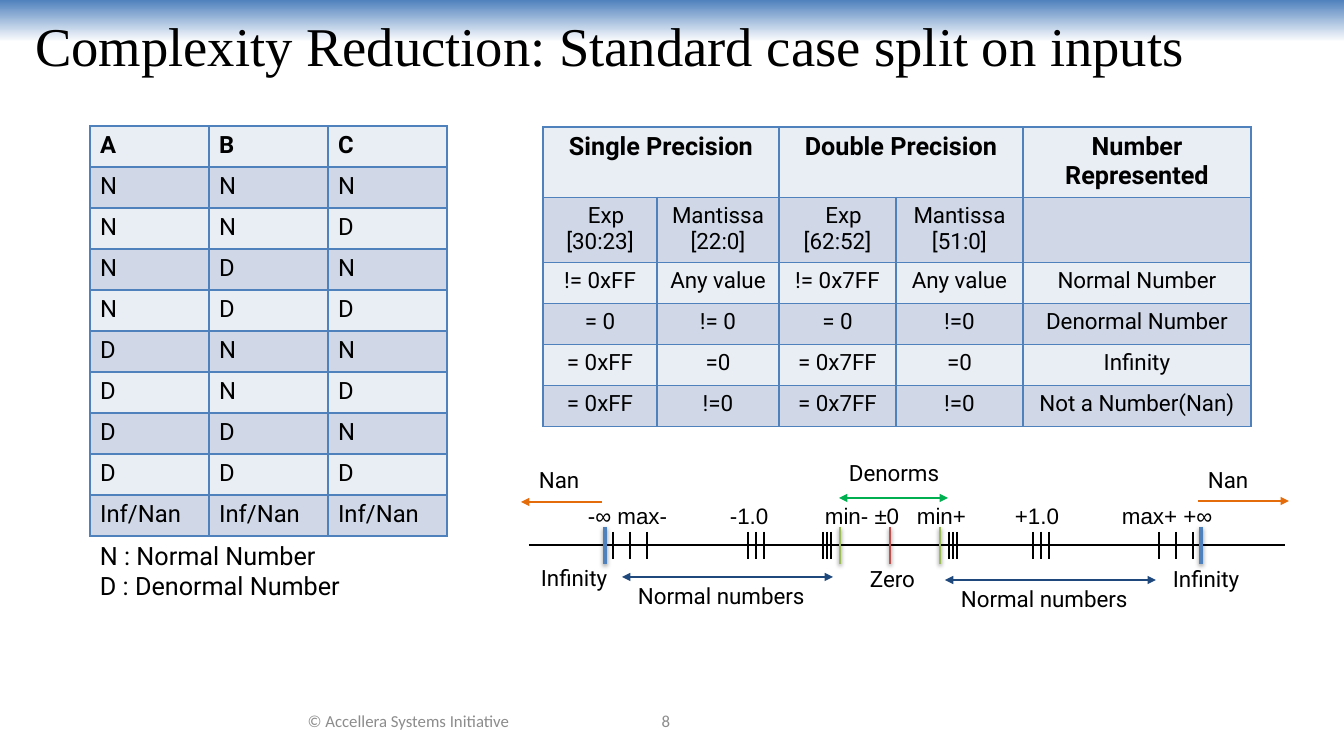
from lxml.etree import SubElement
from pptx import Presentation
from pptx.dml.color import RGBColor
from pptx.enum.shapes import MSO_CONNECTOR, MSO_SHAPE
from pptx.enum.text import MSO_ANCHOR, MSO_AUTO_SIZE, PP_ALIGN
from pptx.oxml.ns import qn
from pptx.util import Emu, Pt

BLACK = RGBColor(0x00, 0x00, 0x00)
WHITE = RGBColor(0xFF, 0xFF, 0xFF)
GRAY = RGBColor(0x8C, 0x8C, 0x8C)
BLUE = RGBColor(0x4F, 0x81, 0xBD)
NAVY = RGBColor(0x1F, 0x49, 0x7D)
GREEN = RGBColor(0x00, 0xB0, 0x50)
OLIVE = RGBColor(0x9B, 0xBB, 0x59)
RED = RGBColor(0xC0, 0x50, 0x4D)
ORANGE = RGBColor(0xE4, 0x6C, 0x0A)
ROW_FILLS = (RGBColor(0xE9, 0xED, 0xF4), RGBColor(0xD0, 0xD8, 0xE8))

CASES = ["ABC", "NNN", "NND", "NDN", "NDD", "DNN", "DND", "DDN", "DDD", ["Inf/Nan"] * 3]
ENCODINGS = [
    ["Single Precision", "", "Double Precision", "", "Number Represented"],
    ["Exp\n[30:23]", "Mantissa\n[22:0]", "Exp\n[62:52]", "Mantissa\n[51:0]", ""],
    ["!= 0xFF", "Any value", "!= 0x7FF", "Any value", "Normal Number"],
    ["= 0", "!= 0", "= 0", "!=0", "Denormal Number"],
    ["= 0xFF", "=0", "= 0x7FF", "=0", "Infinity"],
    ["= 0xFF", "!=0", "= 0x7FF", "!=0", "Not a Number(Nan)"],
]
SCALE_LABELS = [(74, "-∞ max-"), (216, "-1.0"), (311, "min- ±0"),
                (403, "min+"), (501, "+1.0"), (608, "max+ +∞")]


def px(count):
    """Turn whole px into EMU."""
    return Emu(round(count * 914400 / 100.8))


def write(frame, text, size=16, font="Roboto", color=BLACK, bold=False,
          align=PP_ALIGN.LEFT, indent=0, tabs=()):
    """Fill a text frame with one paragraph per line; indent shifts the first."""
    for index, line in enumerate(text.split("\n")):
        paragraph = frame.add_paragraph() if index else frame.paragraphs[0]
        paragraph.alignment = align
        properties = paragraph._p.get_or_add_pPr()
        if indent and index == 0:
            properties.set("marL", str(px(indent)))
            properties.set("indent", "0")
        if tabs:
            stops = SubElement(properties, qn("a:tabLst"))
            for stop in tabs:
                SubElement(stops, qn("a:tab"), pos=str(px(stop)), algn="l")
        run = paragraph.add_run()
        run.text = line
        run.font.size = Pt(size)
        run.font.name = font
        run.font.bold = bold
        run.font.color.rgb = color


def label(shapes, text, left, top, width, height=37, anchor=MSO_ANCHOR.TOP, **style):
    """Add a wrapping text box."""
    frame = shapes.add_textbox(px(left), px(top), px(width), px(height)).text_frame
    frame.word_wrap = True
    frame.vertical_anchor = anchor
    write(frame, text, **style)


def stroke(shapes, start, end, color, weight, heads=(), shadow=False):
    """Draw a straight line with optional arrowheads and a soft shadow."""
    connector = shapes.add_connector(MSO_CONNECTOR.STRAIGHT, *map(px, start + end))
    connector.line.color.rgb = color
    connector.line.width = Pt(weight)
    for head in heads:
        SubElement(connector.line._get_or_add_ln(), qn(f"a:{head}"), type="triangle")
    effects = SubElement(connector._element.spPr, qn("a:effectLst"))
    if shadow:
        outer = SubElement(effects, qn("a:outerShdw"), blurRad=str(Pt(3.1)),
                           dist=str(Pt(1.6)), dir="5400000", rotWithShape="0")
        tint = SubElement(outer, qn("a:srgbClr"), val=str(BLACK))
        SubElement(tint, qn("a:alpha"), val="38000")


def header(slide, width):
    """Place the gradient band behind the slide title."""
    band = slide.shapes.add_shape(MSO_SHAPE.RECTANGLE, 0, 0, px(width), px(42))
    band.shadow.inherit = False
    band.line.fill.background()
    band.fill.gradient()
    band.fill.gradient_angle = 270
    for stop, color, position in zip(band.fill.gradient_stops, (BLUE, WHITE), (0, 1)):
        stop.color.rgb = color
        stop.position = position
    slide.shapes._spTree.insert(2, band._element)
    title = slide.shapes.title
    title.left, title.top, title.width, title.height = map(px, (25, 0, 1293, 89))
    title.text_frame.auto_size = MSO_AUTO_SIZE.NONE
    title.text_frame.vertical_anchor = MSO_ANCHOR.MIDDLE
    write(title.text_frame, "Complexity Reduction: Standard case split on inputs",
          size=39, font="Times New Roman")


def footer(shapes, top):
    """Place the copyright line and the slide number."""
    for text, left, width in (("© Accellera Systems Initiative", 246, 325), ("8", 537, 258)):
        label(shapes, text, left, top, width, 40, MSO_ANCHOR.MIDDLE, size=12,
              font="Calibri", color=GRAY, align=PP_ALIGN.CENTER)


def grid(shapes, left, top, widths, heights):
    """Add a table with blue borders and alternating row fills."""
    table = shapes.add_table(len(heights), len(widths), px(left), px(top),
                             px(sum(widths)), px(sum(heights))).table
    for column, width in zip(table.columns, widths):
        column.width = px(width)
    for index, (row, height) in enumerate(zip(table.rows, heights)):
        row.height = px(height)
        for cell in row.cells:
            properties = cell._tc.get_or_add_tcPr()
            for side in ("lnL", "lnR", "lnT", "lnB"):
                border = SubElement(properties, qn(f"a:{side}"), w=str(Pt(1)))
                SubElement(SubElement(border, qn("a:solidFill")), qn("a:srgbClr"), val=str(BLUE))
            cell.fill.solid()
            cell.fill.fore_color.rgb = ROW_FILLS[index % 2]
    return table


def case_table(shapes, left, top):
    """Place the input case split and its legend."""
    table = grid(shapes, left, top, [119] * 3, [41] * len(CASES))
    for row, case in enumerate(CASES):
        for column, value in enumerate(case):
            write(table.cell(row, column).text_frame, value, size=17, bold=row == 0)
    label(shapes, "N : Normal Number\nD : Denormal Number", left, top + 409, 380, 72, size=18)


def encoding_table(shapes, left, top):
    """Place the table of exponent and mantissa encodings."""
    table = grid(shapes, left, top, [114, 122, 117, 127, 228], [70, 65] + [41] * 4)
    for column in (0, 2):
        table.cell(0, column).merge(table.cell(0, column + 1))
    for row, values in enumerate(ENCODINGS):
        for column, value in enumerate(values):
            if value:
                write(table.cell(row, column).text_frame, value, size=16 if row else 18,
                      bold=row == 0, align=PP_ALIGN.CENTER,
                      indent=12 if value.startswith("Exp") else 0)


def number_line(shapes, left, top):
    """Draw the floating-point number line with its ranges."""
    group = shapes.add_group_shape().shapes
    axis = top + 91
    stops, names = zip(*SCALE_LABELS)
    label(group, "\t" + "\t".join(names), left, top + 43, 830, font="Arial", tabs=stops)
    stroke(group, (left + 25, axis), (left + 781, axis), BLACK, 1.5)
    for center, gap in ((126, 17), (252, 8), (323, 4), (449, 4), (537, 8), (672, 17)):
        for offset in (-gap, 0, gap):
            x = left + center + offset
            stroke(group, (x, axis - 13), (x, axis + 14), BLACK, 1)
    for x, color, weight in ((101, BLUE, 3), (336, OLIVE, 2), (386, RED, 2),
                             (436, OLIVE, 2), (697, BLUE, 3)):
        stroke(group, (left + x, axis - 18), (left + x, axis + 19), color, weight, shadow=True)
    both = ("headEnd", "tailEnd")
    for start, end, y, color, heads in (
            (335, 444, 44, GREEN, both), (118, 329, 123, NAVY, both),
            (441, 652, 126, NAVY, both), (98, 17, 48, ORANGE, both[1:]),
            (694, 785, 47, ORANGE, both[1:])):
        stroke(group, (left + start, top + y), (left + end, top + y), color, 1.5, heads)
    for text, x, y, width in (
            ("Nan", 25, 7, 66), ("Denorms", 335, 0, 118), ("Nan", 694, 7, 66),
            ("Infinity", 27, 105, 97), ("Normal numbers", 124, 123, 211),
            ("Zero", 356, 106, 72), ("Normal numbers", 447, 126, 211),
            ("Infinity", 659, 106, 97)):
        label(group, text, left + x, top + y, width)


def main():
    """Build and save the slide."""
    deck = Presentation()
    deck.slide_width, deck.slide_height = px(1344), px(756)
    slide = deck.slides.add_slide(deck.slide_layouts[5])
    header(slide, 1344)
    footer(slide.shapes, 701)
    case_table(slide.shapes, 90, 126)
    encoding_table(slide.shapes, 543, 127)
    number_line(slide.shapes, 504, 454)
    deck.save("out.pptx")


if __name__ == "__main__":
    main()
